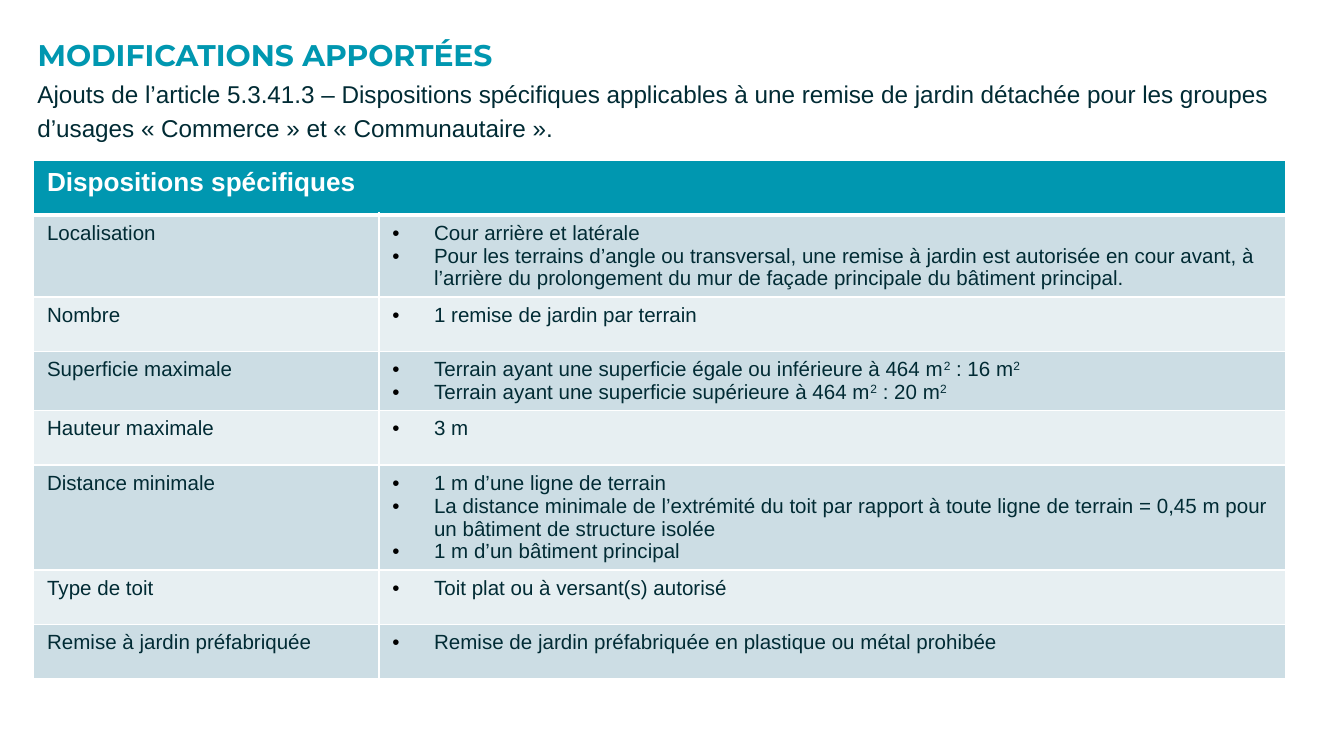
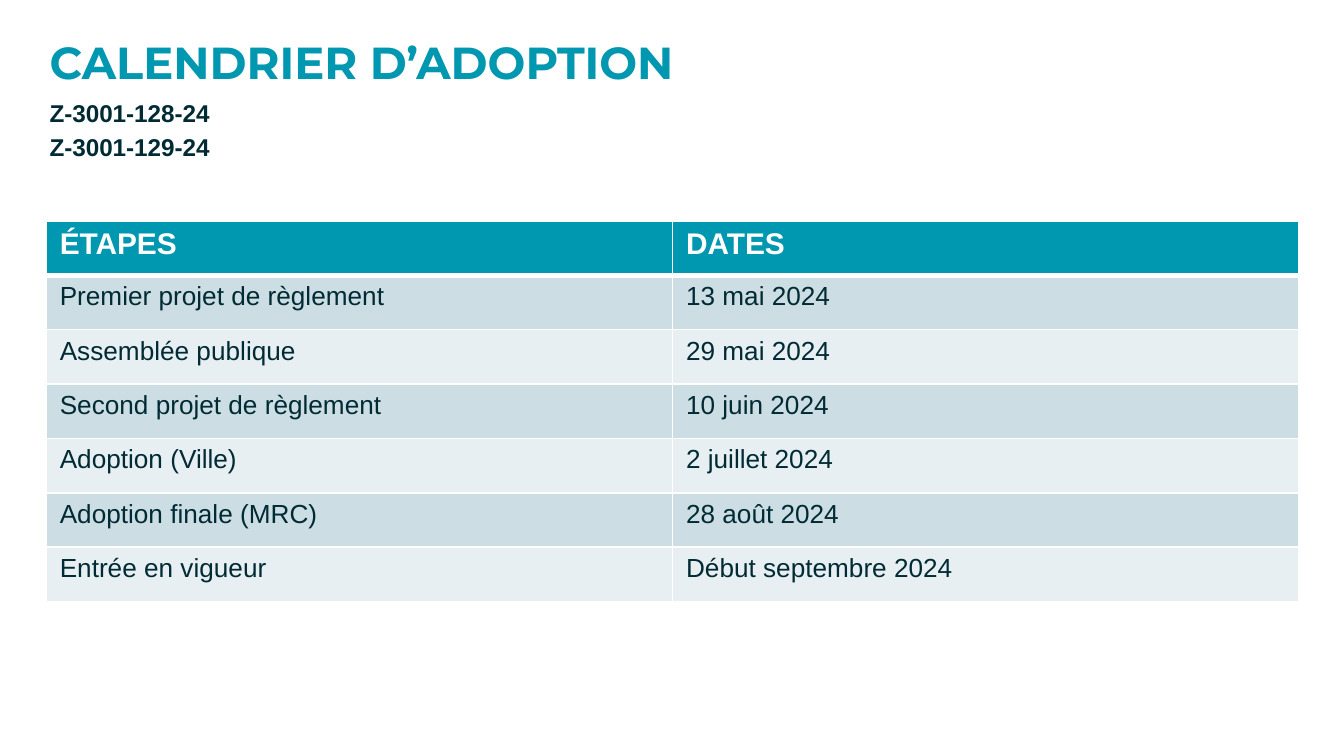
from pptx import Presentation
from pptx import util as u
from pptx.dml import color
from pptx.enum import text
from pptx.oxml import ns
from lxml import etree

WIDTH, HEIGHT = u.Inches(10), u.Inches(5.625)
COLORS = {
    "teal": "0097B0",
    "ink": "012B34",
    "white": "FFFFFF",
    "black": "000000",
    "band_dark": "CCDDE4",
    "band_light": "E7EFF2",
}
TITLE_FONT, BODY_FONT = "Montserrat", "Arial"
ROW_SHARE = 7.2
PADDING = u.Inches(0.1)

PROVISIONS = [
    ("Localisation", [
        "Cour arrière et latérale",
        "Pour les terrains d’angle ou transversal, une remise à jardin est autorisée en cour avant, "
        "à l’arrière du prolongement du mur de façade principale du bâtiment principal.",
    ]),
    ("Nombre", ["1 remise de jardin par terrain"]),
    ("Superficie maximale", [
        "Terrain ayant une superficie égale ou inférieure à 464 m² : 16 m²",
        "Terrain ayant une superficie supérieure à 464 m² : 20 m²",
    ]),
    ("Hauteur maximale", ["3 m"]),
    ("Distance minimale", [
        "1 m d’une ligne de terrain",
        "La distance minimale de l’extrémité du toit par rapport à toute ligne de terrain = 0,45 m "
        "pour un bâtiment de structure isolée",
        "1 m d’un bâtiment principal",
    ]),
    ("Type de toit", ["Toit plat ou à versant(s) autorisé"]),
    ("Remise à jardin préfabriquée", ["Remise de jardin préfabriquée en plastique ou métal prohibée"]),
]
STEPS = [
    ("Premier projet de règlement", "13 mai 2024"),
    ("Assemblée publique", "29 mai 2024"),
    ("Second projet de règlement", "10 juin 2024"),
    ("Adoption (Ville)", "2 juillet 2024"),
    ("Adoption finale (MRC)", "28 août 2024"),
    ("Entrée en vigueur", "Début septembre 2024"),
]


def rgb(name):
    return color.RGBColor.from_string(COLORS[name])


def share_box(left, top, width, height):
    return (int(WIDTH * left / 100), int(HEIGHT * top / 100),
            int(WIDTH * width / 100), int(HEIGHT * height / 100))


def style_runs(paragraph, font_name, size, color_name, bold=False):
    for run in paragraph.runs:
        run.font.name = font_name
        run.font.size = u.Pt(size)
        run.font.bold = bold
        run.font.color.rgb = rgb(color_name)


def fill_frame(shape, content, line_spacing, *style):
    frame = shape.text_frame
    frame.text = content
    frame.word_wrap = True
    frame.auto_size = text.MSO_AUTO_SIZE.NONE
    frame.vertical_anchor = text.MSO_ANCHOR.TOP
    frame.margin_left = frame.margin_right = PADDING
    frame.margin_top = frame.margin_bottom = PADDING
    for paragraph in frame.paragraphs:
        paragraph.alignment = text.PP_ALIGN.LEFT
        paragraph.line_spacing = line_spacing
        style_runs(paragraph, *style)


def add_title(slide, box, content, size):
    title = slide.shapes.title
    title.left, title.top, title.width, title.height = share_box(*box)
    fill_frame(title, content, 0.9, TITLE_FONT, size, "teal", True)


def add_subtitle(slide, box, content, bold=False):
    shape = slide.shapes.add_textbox(*share_box(*box))
    fill_frame(shape, content, 1.15, BODY_FONT, 13, "ink", bold)


def add_borders(cell, top, bottom):
    properties = cell._tc.get_or_add_tcPr()
    for side, points in (("L", 1), ("R", 1), ("T", top), ("B", bottom)):
        line = etree.SubElement(properties, ns.qn("a:ln" + side), w=str(u.Pt(points)))
        fill = etree.SubElement(line, ns.qn("a:solidFill"))
        etree.SubElement(fill, ns.qn("a:srgbClr"), val=COLORS["white"])


def add_bullet(paragraph):
    indent = u.Inches(0.31)
    properties = paragraph._p.get_or_add_pPr()
    properties.set("marL", str(indent))
    properties.set("indent", str(-indent))
    bullet_color = etree.SubElement(properties, ns.qn("a:buClr"))
    etree.SubElement(bullet_color, ns.qn("a:srgbClr"), val=COLORS["black"])
    etree.SubElement(properties, ns.qn("a:buFont"), typeface=BODY_FONT)
    etree.SubElement(properties, ns.qn("a:buChar"), char="•")


def write_with_squares(paragraph, content):
    first, *others = content.split("²")
    paragraph.text = first
    for piece in others:
        square = paragraph.add_run()
        square.text = "2"
        square.font._element.set("baseline", "30000")
        if piece:
            paragraph.add_run().text = piece


def fill_cell(cell, content, row_index, size):
    is_header = row_index == 0
    add_borders(cell, top=3 if row_index == 1 else 1, bottom=3 if is_header else 1)
    band = "teal" if is_header else "band_dark" if row_index % 2 else "band_light"
    cell.fill.solid()
    cell.fill.fore_color.rgb = rgb(band)
    lines = [content] if isinstance(content, str) else content
    for index, line in enumerate(lines):
        frame = cell.text_frame
        paragraph = frame.add_paragraph() if index else frame.paragraphs[0]
        if lines is content:
            add_bullet(paragraph)
        write_with_squares(paragraph, line)
        style_runs(paragraph, BODY_FONT, size, "white" if is_header else "ink", is_header)


def add_banded_table(slide, left, top, column_shares, rows, header_size, body_size):
    box = share_box(left, top, sum(column_shares), ROW_SHARE * len(rows))
    table = slide.shapes.add_table(len(rows), len(column_shares), *box).table
    for column, share in zip(table.columns, column_shares):
        column.width = int(WIDTH * share / 100)
    for row_index, contents in enumerate(rows):
        table.rows[row_index].height = int(HEIGHT * ROW_SHARE / 100)
        for column_index, content in enumerate(contents):
            size = body_size if row_index else header_size
            fill_cell(table.cell(row_index, column_index), content, row_index, size)
    return table


def add_changes_slide(presentation):
    slide = presentation.slides.add_slide(presentation.slide_layouts[5])
    add_title(slide, (1.8, 3.56, 93.2, 11.2), "MODIFICATIONS APPORTÉES", 16)
    rows = [("Dispositions spécifiques", "")] + PROVISIONS
    table = add_banded_table(slide, 2.5, 21.24, (25.7, 67.5), rows, 14, 11)
    table.cell(0, 0).merge(table.cell(0, 1))
    add_subtitle(slide, (1.8, 8.18, 94.5, 11.2),
                 "Ajouts de l’article 5.3.41.3 – Dispositions spécifiques applicables à une remise de jardin "
                 "détachée pour les groupes d’usages « Commerce » et « Communautaire ».")


def add_calendar_slide(presentation):
    slide = presentation.slides.add_slide(presentation.slide_layouts[5])
    add_title(slide, (2.7, 3.56, 92.2, 11.2), "CALENDRIER D’ADOPTION", 24)
    add_subtitle(slide, (2.7, 10.67, 94.5, 11.2), "Z-3001-128-24\nZ-3001-129-24", True)
    add_banded_table(slide, 3.45, 29.2, (46.6, 46.6), [("ÉTAPES", "DATES")] + STEPS, 16, 14)


def main():
    presentation = Presentation()
    presentation.slide_width, presentation.slide_height = WIDTH, HEIGHT
    add_changes_slide(presentation)
    add_calendar_slide(presentation)
    presentation.save("out.pptx")


if __name__ == "__main__":
    main()
